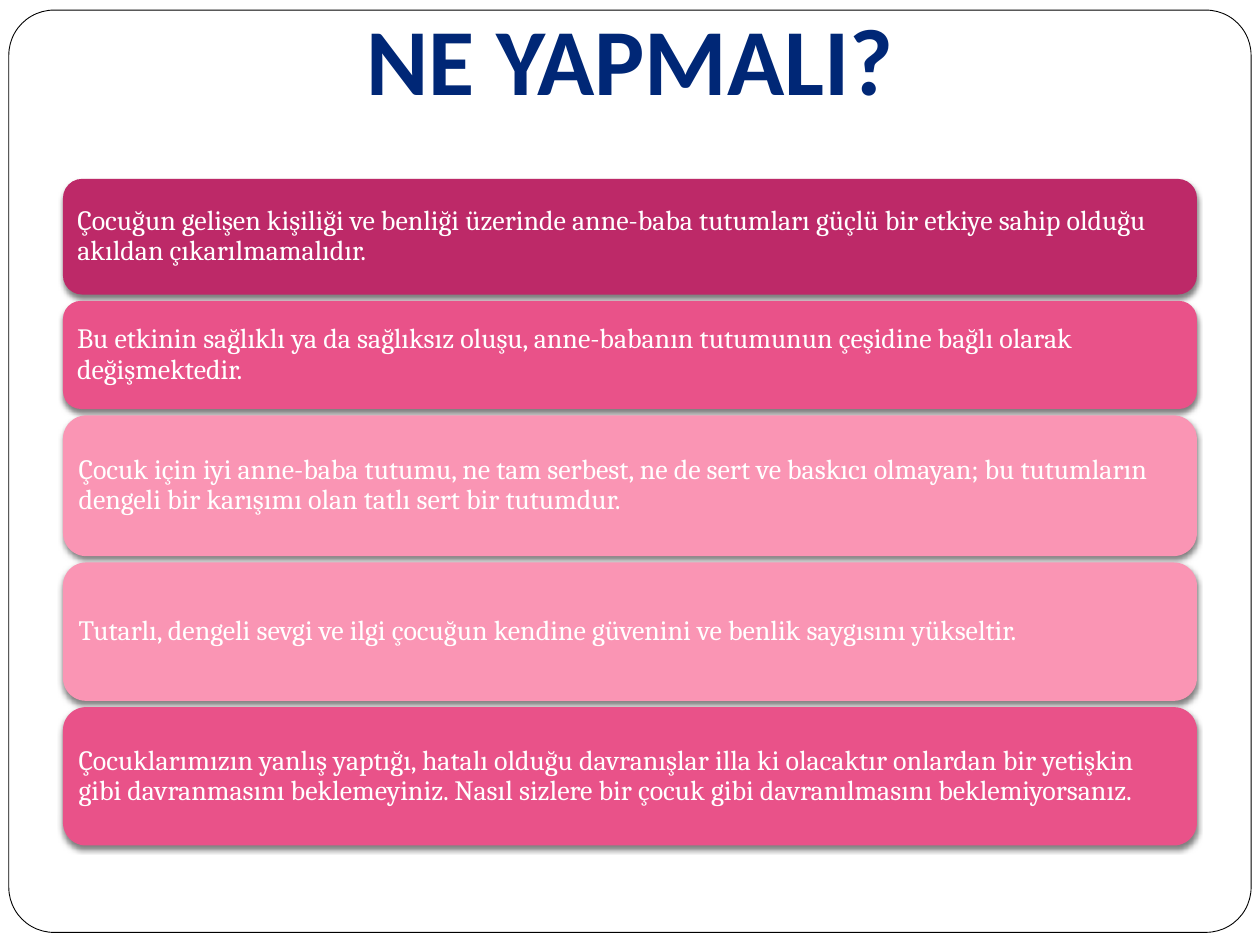
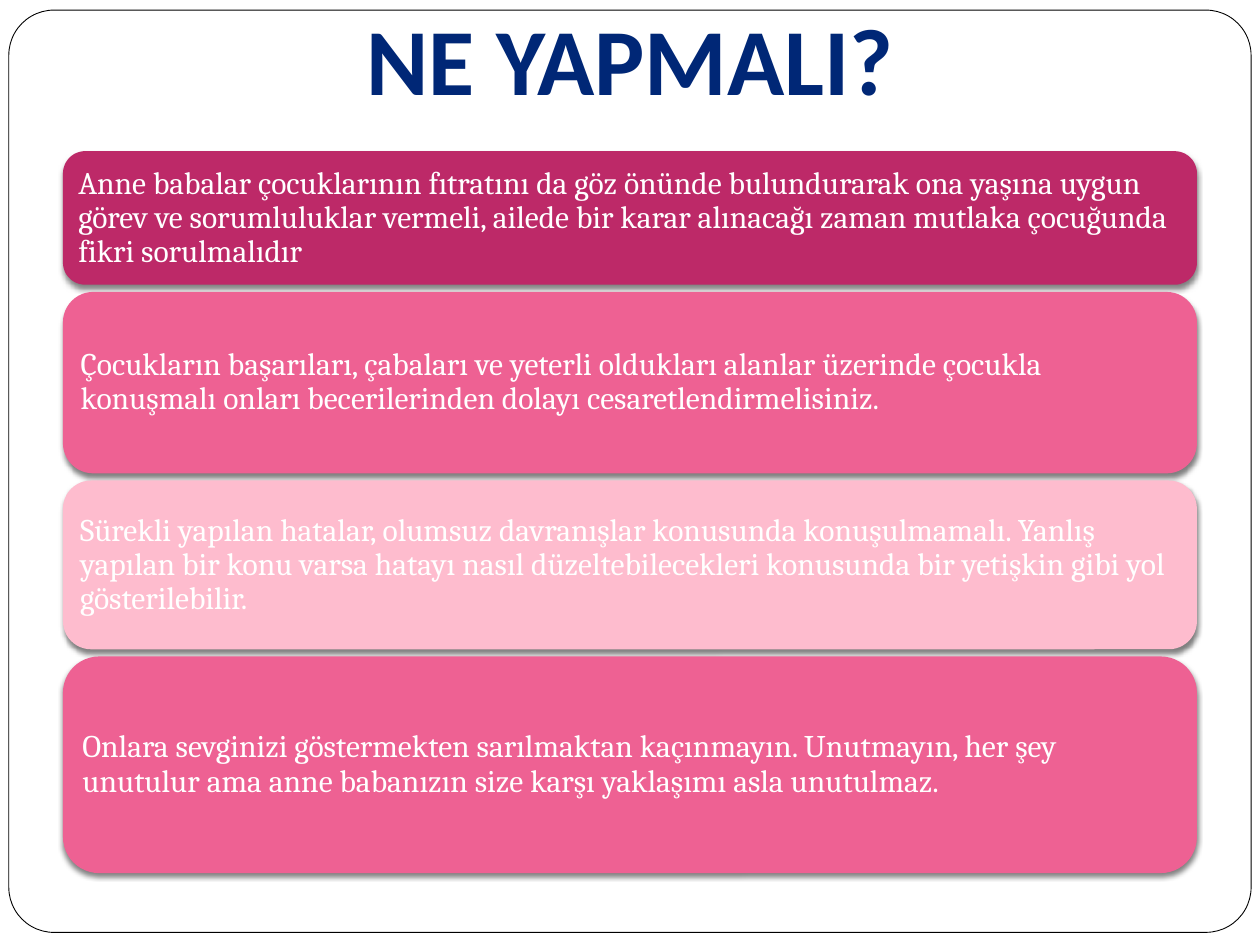
from dataclasses import dataclass
from lxml import etree
from pptx import Presentation
from pptx.dml.color import RGBColor as RGB
from pptx.enum.shapes import MSO_SHAPE as Shape
from pptx.enum.text import MSO_ANCHOR as Anchor, PP_ALIGN as Align
from pptx.oxml.ns import qn
from pptx.util import Inches, Pt

WIDTH, HEIGHT = Inches(10), Inches(7.5)
COL, ROW = WIDTH / 100, HEIGHT / 75


@dataclass(frozen=True)
class Theme:
    """Colours, fonts and type sizes of the deck."""
    white: str = "FFFFFF"
    black: str = "000000"
    navy: str = "002776"
    plum: str = "BD2968"
    rose: str = "E95289"
    pink: str = "FA95B4"
    coral: str = "EE6193"
    blush: str = "FEBCCE"
    head: str = "Calibri"
    body: str = "Cambria"
    title: int = 54
    small: int = 16
    large: int = 18


@dataclass(frozen=True)
class Box:
    """A box measured in grid columns and rows."""
    x: float
    y: float
    w: float
    h: float

    def place(self):
        """Return left, top, width and height as lengths."""
        return (round(self.x * COL), round(self.y * ROW),
                round(self.w * COL), round(self.h * ROW))


THEME = Theme()
FRAME = Box(0.7, 0.8, 98.6, 73.2)
TITLE = Box(5, 2.1, 90, 13.4)


def set_font(par, name, size, color, bold=False):
    """Set the font of a whole paragraph."""
    font = par.font
    font.name, font.size, font.bold = name, Pt(size), bold
    font.color.rgb = RGB.from_string(color)


def add_round(slide, box, fill):
    """Add a plain rounded box without line or shadow."""
    shape = slide.shapes.add_shape(Shape.ROUNDED_RECTANGLE, *box.place())
    shape.shadow.inherit = False
    shape.fill.solid()
    shape.fill.fore_color.rgb = RGB.from_string(fill)
    shape.line.fill.background()
    return shape


def add_shade(shape):
    """Drop a soft shadow straight below a shape."""
    effects = shape._element.spPr.find(qn("a:effectLst"))
    shade = etree.SubElement(effects, qn("a:outerShdw"), blurRad=str(Pt(3)),
                             dist=str(Pt(2)), dir="5400000", rotWithShape="0")
    color = etree.SubElement(shade, qn("a:srgbClr"), val=THEME.black)
    etree.SubElement(color, qn("a:alpha"), val="50000")


def add_frame(slide, box):
    """Draw the thin rounded frame round the slide."""
    frame = add_round(slide, box, THEME.white)
    frame.adjustments[0] = 0.049
    frame.line.color.rgb = RGB.from_string(THEME.black)
    frame.line.width = Pt(0.5)


def add_title(slide, box, text):
    """Write the centred title near the top of its box."""
    frame = slide.shapes.add_textbox(*box.place()).text_frame
    frame.word_wrap = True
    frame.vertical_anchor = Anchor.BOTTOM
    frame.margin_top, frame.margin_bottom = 0, round(box.h * 0.48 * ROW)
    par = frame.paragraphs[0]
    par.text, par.alignment = text, Align.CENTER
    set_font(par, THEME.head, THEME.title, THEME.navy, True)


def add_bar(slide, box, fill, text, size):
    """Add one coloured bar with its advice."""
    bar = add_round(slide, box, fill)
    add_shade(bar)
    frame = bar.text_frame
    frame.word_wrap = True
    frame.vertical_anchor = Anchor.MIDDLE
    frame.margin_left = frame.margin_right = round(0.7 * COL)
    frame.margin_top = frame.margin_bottom = round(0.7 * ROW)
    par = frame.paragraphs[0]
    par.text, par.alignment, par.line_spacing = text, Align.LEFT, 0.9
    set_font(par, THEME.body, size, THEME.white)


def add_stack(slide, box, gap, size, bars):
    """Stack bars down a box, sharing its height by weight."""
    free = box.h - gap * (len(bars) - 1)
    total = sum(weight for weight, _, _ in bars)
    top = box.y
    for weight, fill, text in bars:
        high = free * weight / total
        add_bar(slide, Box(box.x, top, box.w, high), fill, text, size)
        top += high + gap


def add_page(deck, box, gap, size, bars):
    """Add one slide with frame, title and stacked bars."""
    slide = deck.slides.add_slide(deck.slide_layouts[6])
    add_frame(slide, FRAME)
    add_title(slide, TITLE, "NE YAPMALI?")
    add_stack(slide, box, gap, size, bars)


HABITS = [
    (9.2, THEME.plum, "Çocuğun gelişen kişiliği ve benliği üzerinde anne-baba "
     "tutumları güçlü bir etkiye sahip olduğu akıldan çıkarılmamalıdır."),
    (8.6, THEME.rose, "Bu etkinin sağlıklı ya da sağlıksız oluşu, anne-babanın "
     "tutumunun çeşidine bağlı olarak değişmektedir."),
    (11.2, THEME.pink, "Çocuk için iyi anne-baba tutumu, ne tam serbest, ne de "
     "sert ve baskıcı olmayan; bu tutumların dengeli bir karışımı olan tatlı "
     "sert bir tutumdur."),
    (11, THEME.pink, "Tutarlı, dengeli sevgi ve ilgi çocuğun kendine güvenini "
     "ve benlik saygısını yükseltir."),
    (11, THEME.rose, "Çocuklarımızın yanlış yaptığı, hatalı olduğu davranışlar "
     "illa ki olacaktır onlardan bir yetişkin gibi davranmasını beklemeyiniz. "
     "Nasıl sizlere bir çocuk gibi davranılmasını beklemiyorsanız."),
]
TALKS = [
    (10.6, THEME.plum, "Anne babalar çocuklarının fıtratını da göz önünde "
     "bulundurarak ona yaşına uygun görev ve sorumluluklar vermeli, ailede bir "
     "karar alınacağı zaman mutlaka çocuğunda fikri sorulmalıdır"),
    (14.4, THEME.coral, "Çocukların başarıları, çabaları ve yeterli oldukları "
     "alanlar üzerinde çocukla konuşmalı onları becerilerinden dolayı "
     "cesaretlendirmelisiniz."),
    (13.4, THEME.blush, "Sürekli yapılan hatalar, olumsuz davranışlar konusunda "
     "konuşulmamalı. Yanlış yapılan bir konu varsa hatayı nasıl "
     "düzeltebilecekleri konusunda bir yetişkin gibi yol gösterilebilir."),
    (17.2, THEME.coral, "Onlara sevginizi göstermekten sarılmaktan kaçınmayın. "
     "Unutmayın, her şey unutulur ama anne babanızın size karşı yaklaşımı asla "
     "unutulmaz."),
]


def main():
    """Build and save the deck."""
    deck = Presentation()
    deck.slide_width, deck.slide_height = WIDTH, HEIGHT
    add_page(deck, Box(5, 14.2, 90, 52.9), 0.5, THEME.small, HABITS)
    add_page(deck, Box(5, 12, 90, 57.3), 0.57, THEME.large, TALKS)
    deck.save("out.pptx")


if __name__ == "__main__":
    main()
